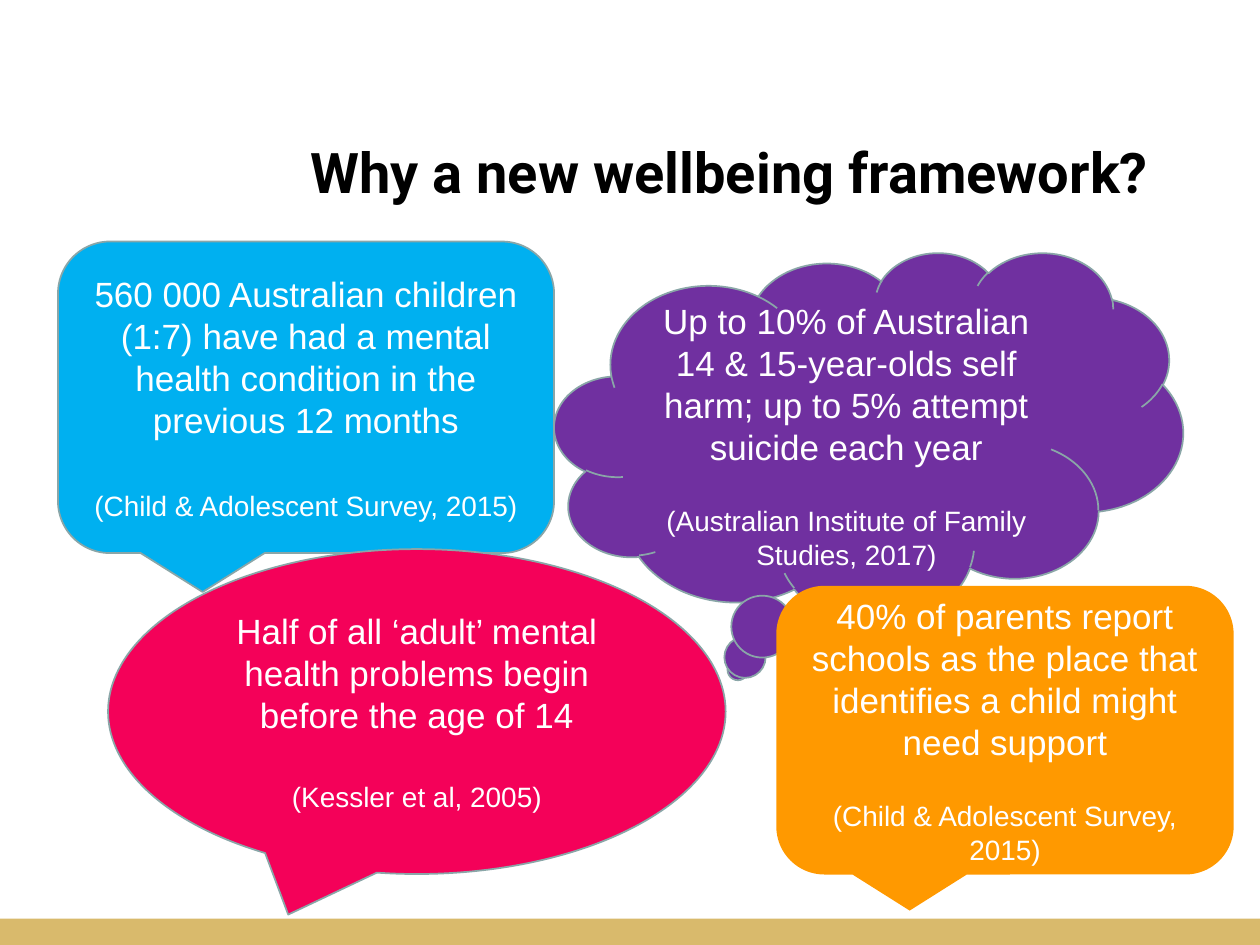
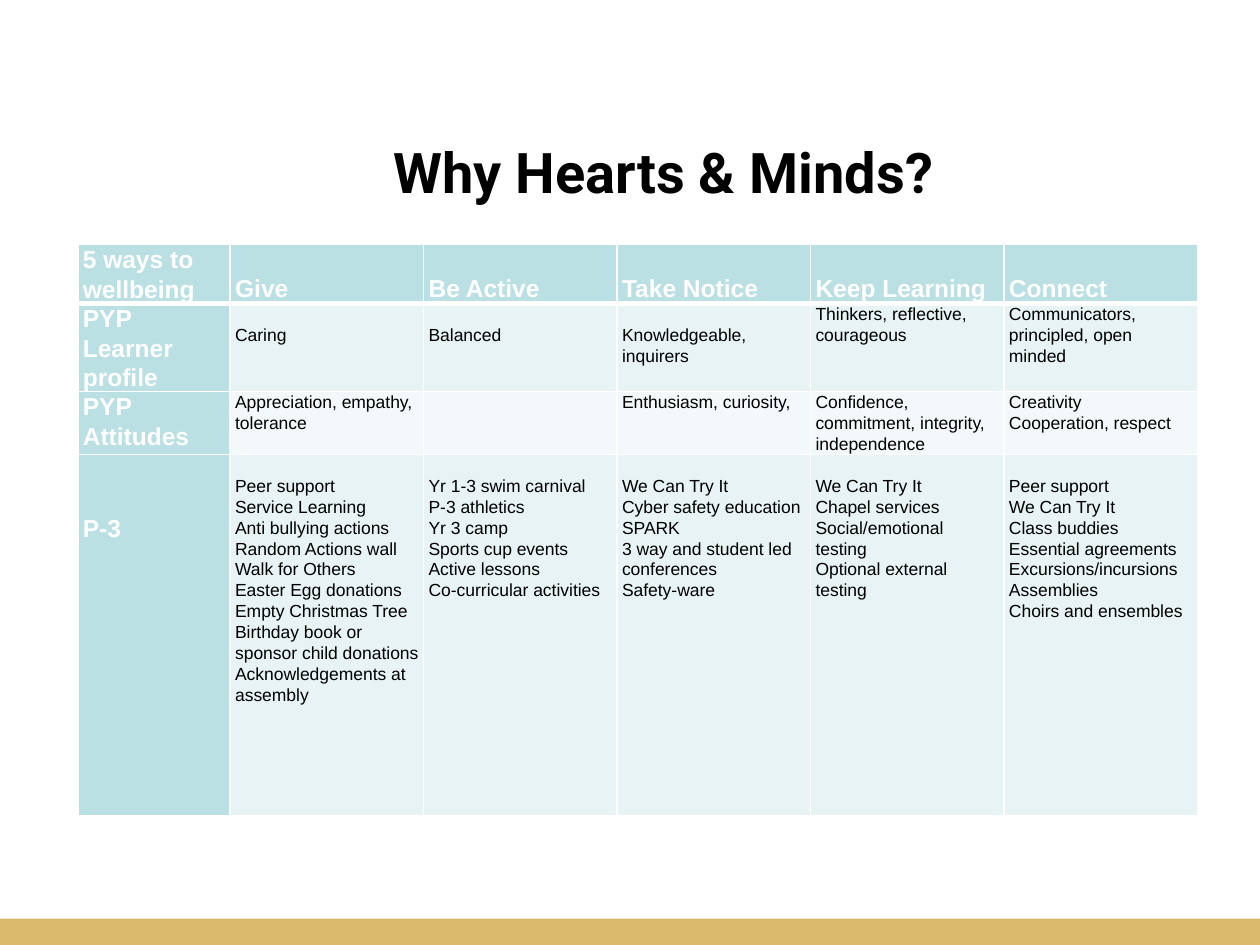
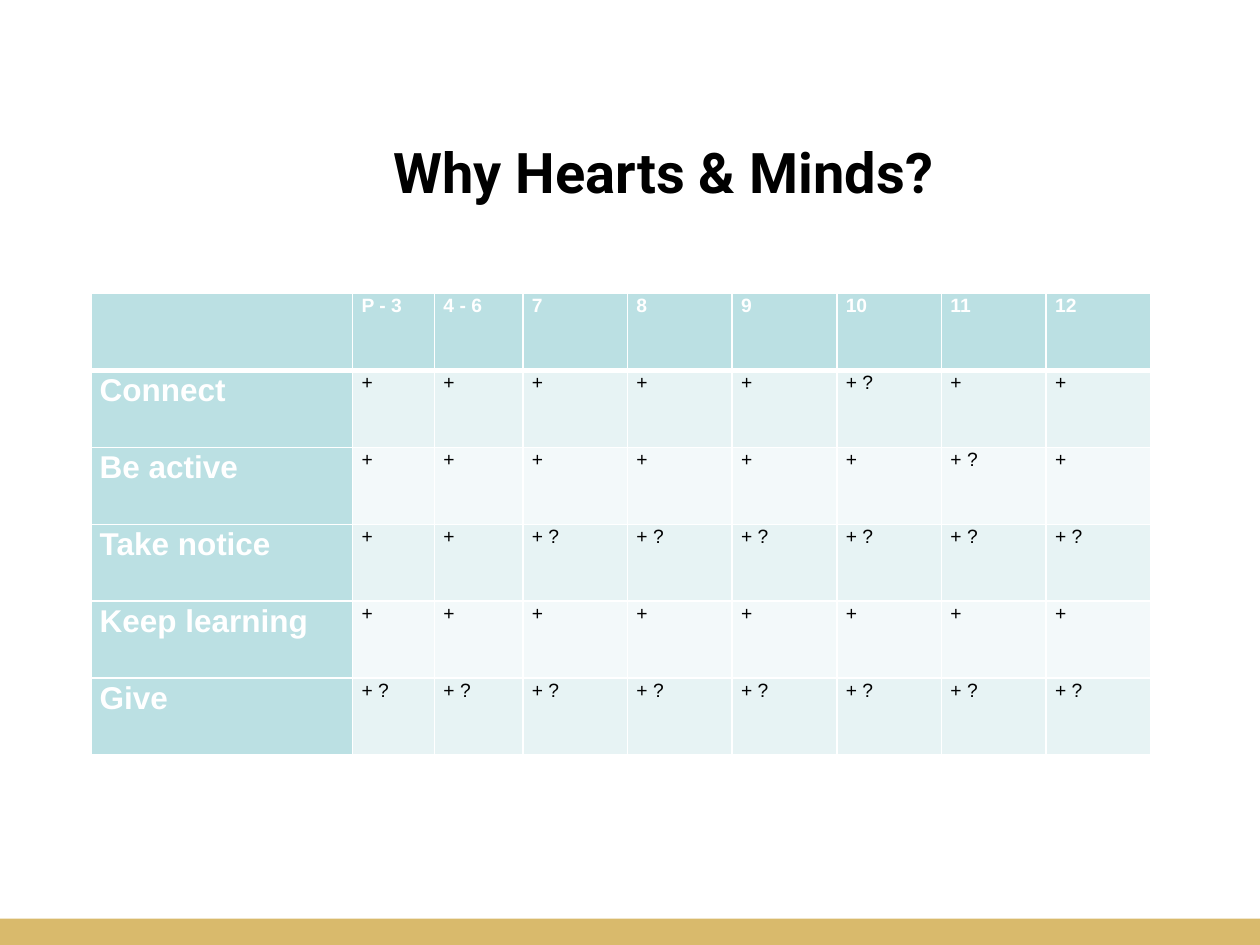
from lxml import etree
from pptx import Presentation
from pptx.dml.color import RGBColor
from pptx.enum import shapes, text
from pptx.oxml import ns
from pptx.util import Cm, Pt

WHITE = RGBColor(0xFF, 0xFF, 0xFF)
BLACK = RGBColor(0x00, 0x00, 0x00)
GOLD = RGBColor(0xD9, 0xBA, 0x6C)
BLUE = RGBColor(0x00, 0xB0, 0xF0)
PURPLE = RGBColor(0x70, 0x30, 0xA0)
PINK = RGBColor(0xF4, 0x01, 0x59)
ORANGE = RGBColor(0xFF, 0x99, 0x00)
OUTLINE = RGBColor(0x8A, 0xA6, 0xA8)
HEADING = RGBColor(0xBB, 0xE0, 0xE3)
ODD_ROW = RGBColor(0xE7, 0xF3, 0xF4)
EVEN_ROW = RGBColor(0xF3, 0xF9, 0xFA)

ROUNDED = shapes.MSO_SHAPE.ROUNDED_RECTANGULAR_CALLOUT
CLOUD = shapes.MSO_SHAPE.CLOUD_CALLOUT
OVAL = shapes.MSO_SHAPE.OVAL_CALLOUT

# Height of one line in the wellbeing table
HEADING_LINE = 0.59
BODY_LINE = 0.42


class Deck:
    TITLE_FONT = "Roboto"
    BODY_FONT = "Arial"

    def __init__(self):
        self.presentation = Presentation()
        self.presentation.slide_width = Cm(25.4)
        self.presentation.slide_height = Cm(19.05)
        self.page = None

    def add_page(self, title, left, width):
        """Start a slide with its title and the gold band at the foot."""
        layout = self.presentation.slide_layouts[5]
        self.page = self.presentation.slides.add_slide(layout)
        self.add_shape(shapes.MSO_SHAPE.RECTANGLE, (0, 18.52, 25.4, 0.53), GOLD)
        box = self.page.shapes.title
        box.left, box.top, box.width, box.height = map(Cm, (left, 1.08, width, 3.18))
        frame = box.text_frame
        frame.text = title
        frame.auto_size = text.MSO_AUTO_SIZE.NONE
        frame.vertical_anchor = text.MSO_ANCHOR.BOTTOM
        frame.paragraphs[0].alignment = text.PP_ALIGN.LEFT
        self.style(frame.paragraphs[0], 32, BLACK, True, self.TITLE_FONT)

    def style(self, paragraph, size, color, bold=False, font=BODY_FONT):
        for span in paragraph.runs:
            span.font.name = font
            span.font.size = Pt(size)
            span.font.bold = bold
            span.font.color.rgb = color

    def add_shape(self, kind, place, fill, line=None):
        shape = self.page.shapes.add_shape(kind, *map(Cm, place))
        shape.shadow.inherit = False
        shape.fill.solid()
        shape.fill.fore_color.rgb = fill
        if line is None:
            shape.line.fill.background()
        else:
            shape.line.color.rgb = line
            shape.line.width = Pt(1)
        return shape

    def add_callout(self, kind, place, fill, fact, citation, gap, line=OUTLINE):
        callout = self.add_shape(kind, place, fill, line)
        frame = callout.text_frame
        frame.text = f"{fact}\n{citation}"
        frame.word_wrap = True
        frame.vertical_anchor = text.MSO_ANCHOR.MIDDLE
        for para, size in zip(frame.paragraphs, (20, 16)):
            para.alignment = text.PP_ALIGN.CENTER
            self.style(para, size, WHITE)
        frame.paragraphs[1].space_before = Pt(gap)
        return callout

    def add_grid(self, corner, widths, heights, rows, sizes, margin, drops=None):
        """Draw a table; sizes are for header, first column and body,
        and drops maps (row, column) to the gap above that cell's text."""
        left, top = corner
        header_size, label_size, body_size = sizes
        frame = self.page.shapes.add_table(
            len(heights), len(widths), Cm(left), Cm(top),
            Cm(sum(widths)), Cm(sum(heights)))
        table = frame.table
        for column, width in zip(table.columns, widths):
            column.width = Cm(width)
        for r, (row, height) in enumerate(zip(rows, heights)):
            table.rows[r].height = Cm(height)
            for c, words in enumerate(row):
                cell = table.cell(r, c)
                heading = r == 0 or c == 0
                size = header_size if r == 0 else label_size if c == 0 else body_size
                cell.text_frame.text = words
                cell.margin_left = cell.margin_right = Cm(margin)
                cell.margin_top = Cm((drops or {}).get((r, c), 0))
                cell.margin_bottom = 0
                self.add_borders(cell, r)
                cell.fill.solid()
                cell.fill.fore_color.rgb = (
                    HEADING if heading else ODD_ROW if r % 2 else EVEN_ROW)
                for para in cell.text_frame.paragraphs:
                    para.line_spacing = 1.07
                    self.style(para, size, WHITE if heading else BLACK, heading)

    def add_borders(self, cell, row):
        """White lines, thicker between the header and the body."""
        properties = cell._tc.get_or_add_tcPr()
        thick_side = {0: "lnB", 1: "lnT"}.get(row)
        for side in ("lnL", "lnR", "lnT", "lnB"):
            width = Pt(3 if side == thick_side else 1)
            line = etree.SubElement(properties, ns.qn(f"a:{side}"), w=str(width))
            fill = etree.SubElement(line, ns.qn("a:solidFill"))
            etree.SubElement(fill, ns.qn("a:srgbClr"), val=str(WHITE))


def build_reasons(deck):
    deck.add_page("Why a new wellbeing framework?", 6, 17.42)
    deck.add_callout(
        ROUNDED, (1.17, 4.87, 10, 6.28), BLUE,
        "560 000 Australian children (1:7) have had a mental health condition "
        "in the previous 12 months",
        "(Child & Adolescent Survey, 2015)", 27.6)
    cloud = deck.add_callout(
        CLOUD, (11.18, 5.08, 12.67, 7.49), PURPLE,
        "Up to 10% of Australian 14 & 15-year-olds self harm; "
        "up to 5% attempt suicide each year",
        "(Australian Institute of Family Studies, 2017)", 20.7)
    cloud.text_frame.margin_top = Cm(0.37)
    deck.add_callout(
        OVAL, (2.18, 11.07, 12.45, 6.55), PINK,
        "Half of all ‘adult’ mental health problems begin before the age of 14",
        "(Kessler et al, 2005)", 25.3)
    deck.add_callout(
        ROUNDED, (15.65, 11.81, 9.22, 5.82), ORANGE,
        "40% of parents report schools as the place that identifies "
        "a child might need support",
        "(Child & Adolescent Survey, 2015)", 20.7, line=None)


def build_programs(deck):
    rows = [
        ["5 ways to wellbeing", "Give", "Be Active", "Take Notice",
         "Keep Learning", "Connect"],
        ["PYP\nLearner profile", "Caring", "Balanced", "Knowledgeable, inquirers",
         "Thinkers, reflective, courageous",
         "Communicators, principled, open minded"],
        ["PYP\nAttitudes", "Appreciation, empathy, tolerance", "",
         "Enthusiasm, curiosity,",
         "Confidence, commitment, integrity, independence",
         "Creativity\nCooperation, respect"],
        ["P-3",
         "Peer support\nService Learning\nAnti bullying actions\n"
         "Random Actions wall\nWalk for Others\nEaster Egg donations\n"
         "Empty Christmas Tree\nBirthday book or sponsor child donations\n"
         "Acknowledgements at assembly",
         "Yr 1-3 swim carnival\nP-3 athletics\nYr 3 camp\nSports cup events\n"
         "Active lessons\nCo-curricular activities",
         "We Can Try It\nCyber safety education\nSPARK\n"
         "3 way and student led conferences\nSafety-ware",
         "We Can Try It\nChapel services\nSocial/emotional testing\n"
         "Optional external testing",
         "Peer support\nWe Can Try It\nClass buddies\nEssential agreements\n"
         "Excursions/incursions\nAssemblies\nChoirs and ensembles"],
    ]
    drops = {(0, c): HEADING_LINE for c in range(1, 6)}
    drops.update({(1, c): BODY_LINE for c in range(1, 4)})
    drops.update({(3, c): BODY_LINE for c in range(1, 6)})
    drops[3, 0] = 2 * HEADING_LINE
    deck.add_page("Why Hearts & Minds?", 7.67, 13.18)
    deck.add_grid((1.57, 4.93), [3.07] + [3.9] * 5, [1.12, 1.63, 1.07, 7.29],
                  rows, (14, 14, 10), 0.1, drops)


def build_coverage(deck):
    years = ["P - 3", "4 - 6", "7", "8", "9", "10", "11", "12"]
    unsure_years = {
        "Connect": ["10"],
        "Be active": ["11"],
        "Take notice": years[2:],
        "Keep learning": [],
        "Give": years,
    }
    rows = [["", *years]]
    for way, unsure in unsure_years.items():
        rows.append([way] + ["+ ?" if year in unsure else "+" for year in years])
    deck.add_page("Why Hearts & Minds?", 7.67, 13.18)
    deck.add_grid((1.83, 5.92), [5.28, 1.65, 1.78] + [2.11] * 6, [1.55] * 6,
                  rows, (11, 18, 11), 0.18)


def main():
    deck = Deck()
    build_reasons(deck)
    build_programs(deck)
    build_coverage(deck)
    deck.presentation.save("out.pptx")


if __name__ == "__main__":
    main()
